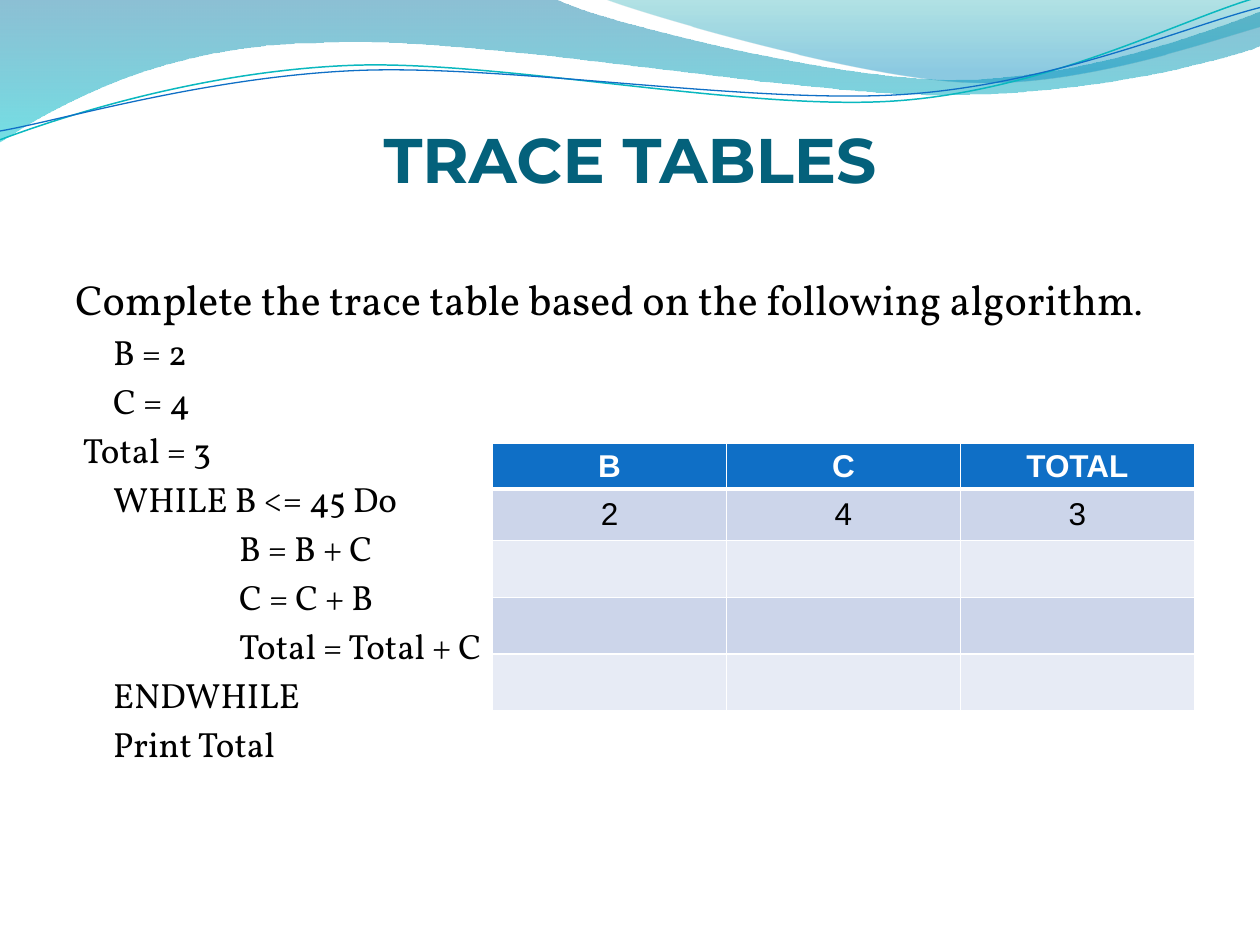
import pptx
import pptx.util
import pptx.dml.color
import pptx.enum.text
import pptx.oxml
import pptx.oxml.ns

COLORS = {
    "title": "04617B", "ink": "000000", "paper": "FFFFFF", "header": "0F6FC6",
    "band": "CCD5EA", "pale": "E7EBF5", "teal": "0AB8BF", "deep": "0074A1",
    "cyan": "00C6CF", "lagoon": "00A1A9", "sky": "008BBF",
}
GRID_COLUMNS, GRID_ROWS = 10, 7.5
ALIGN = pptx.enum.text.PP_ALIGN
ANCHOR = pptx.enum.text.MSO_ANCHOR

# Each outline is a start point, then cubic curves (three points) or lines (one point).
LEFT_WAVE = [
    (0, -0.01), [(4.4, -0.01)],
    [(4.76, 0.17), (6.64, 0.63), (7.58, 0.63)],
    [(8.53, 0.63), (9.58, 0.26), (10, 0.09)], [(10.01, 0.36)],
    [(9.83, 0.44), (8.7, 0.76), (7.46, 0.75)],
    [(6.22, 0.75), (3.82, 0.28), (2.57, 0.34)],
    [(1.29, 0.35), (0.46, 0.83), (-0.01, 1.13)], [(0, -0.01)],
]
RIGHT_WAVE = [
    (4.79, -0.01), [(5.09, 0.11), (6.82, 0.62), (7.69, 0.65)],
    [(8.56, 0.69), (9.61, 0.32), (10, 0.21)], [(10, 0)], [(4.79, -0.01)],
]
TEAL_LINE = [
    (0, 1.11), [(0.48, 0.93), (1.58, 0.57), (2.77, 0.52)],
    [(3.95, 0.47), (5.93, 0.89), (7.13, 0.8)],
    [(8.33, 0.71), (9.38, 0.15), (9.98, -0.02)],
]
BLUE_LINE = [
    (0, 1.04), [(0.47, 0.96), (1.64, 0.61), (2.83, 0.56)],
    [(4.03, 0.51), (5.97, 0.83), (7.17, 0.75)],
    [(8.36, 0.67), (9.41, 0.21), (10, 0.06)],
]
# Left margin in columns, then the line of the algorithm.
ALGORITHM = [
    (0.3, "B = 2"), (0.3, "C = 4"), (0.06, "Total = 3"), (0.3, "WHILE B <= 45 Do"),
    (1.3, "B = B + C"), (1.3, "C = C + B"), (1.3, "Total = Total + C"),
    (0.3, "ENDWHILE"), (0.3, "Print Total"),
]
TRACE = [["B", "C", "TOTAL"], ["2", "4", "3"]] + [[""] * 3] * 3
TRACE_HEIGHTS = [0.36, 0.41, 0.45, 0.45, 0.45]


def color(name):
    return pptx.dml.color.RGBColor.from_string(COLORS[name])


def bend(shape, segments):
    """Join each three line points of a freeform into one cubic curve."""
    lines = list(shape._element.iter(pptx.oxml.ns.qn("a:lnTo")))
    for segment in segments:
        group, lines = lines[:len(segment)], lines[len(segment):]
        if len(segment) == 3:
            curve = pptx.oxml.parse_xml(f'<a:cubicBezTo {pptx.oxml.ns.nsdecls("a")}/>')
            group[0].addprevious(curve)
            for line in group:
                curve.append(line[0])
                line.getparent().remove(line)


class SlideBuilder:
    """Holds the deck's grid and text style, and the slide being filled."""

    def __init__(self, deck):
        self.column = deck.slide_width / GRID_COLUMNS
        self.row = deck.slide_height / GRID_ROWS
        self.body_font, self.table_font = "Vollkorn", "Arial"
        self.slide = deck.slides.add_slide(deck.slide_layouts[5])

    def across(self, columns):
        return pptx.util.Emu(round(columns * self.column))

    def down(self, rows):
        return pptx.util.Emu(round(rows * self.row))

    def area(self, left, top, width, height):
        return self.across(left), self.down(top), self.across(width), self.down(height)

    def span(self, para, text, font, size, ink, bold=False):
        span = para.add_run()
        span.text = text
        span.font.name, span.font.size, span.font.bold = font, pptx.util.Pt(size), bold
        span.font.color.rgb = color(ink)

    def outline(self, outline, close):
        start, *segments = outline
        points = [(self.across(x), self.down(y)) for segment in segments for x, y in segment]
        builder = self.slide.shapes.build_freeform(self.across(start[0]), self.down(start[1]))
        builder.add_line_segments(points, close=close)
        shape = builder.convert_to_shape()
        shape.shadow.inherit = False
        bend(shape, segments)
        return shape

    def wave(self, outline, stops):
        """Fill an outline from top to bottom; a stop is position, colour, opacity."""
        shape = self.outline(outline, True)
        shape.line.fill.background()
        shape.fill.gradient()
        shape.fill.gradient_angle = 270
        for stop, (position, name, opacity) in zip(shape.fill.gradient_stops, stops):
            stop.position = position
            stop.color.rgb = color(name)
        tints = shape._element.spPr.iter(pptx.oxml.ns.qn("a:srgbClr"))
        for tint, (position, name, opacity) in zip(tints, stops):
            tint.append(pptx.oxml.parse_xml(
                f'<a:alpha {pptx.oxml.ns.nsdecls("a")} val="{round(opacity * 100000)}"/>'))

    def ribbon(self, outline, name, width):
        shape = self.outline(outline, False)
        shape.fill.background()
        shape.line.color.rgb = color(name)
        shape.line.width = pptx.util.Pt(width)

    def title(self, text, area):
        box = self.slide.shapes.title
        box.left, box.top, box.width, box.height = self.area(*area)
        frame = box.text_frame
        frame.margin_left = frame.margin_right = frame.margin_bottom = 0
        frame.vertical_anchor = ANCHOR.BOTTOM
        para = frame.paragraphs[0]
        para.alignment = ALIGN.CENTER
        self.span(para, text, "Montserrat", 36, "title", True)

    def body(self, lead, lines, area):
        frame = self.slide.shapes.add_textbox(*self.area(*area)).text_frame
        frame.word_wrap = True
        para = frame.paragraphs[0]
        self.span(para, lead, self.body_font, 24, "ink")
        self.span(para, ".", self.body_font, 20, "ink")
        for margin, text in lines:
            para = frame.add_paragraph()
            para.space_before = pptx.util.Pt(4)
            para._p.get_or_add_pPr().set("marL", str(self.across(margin)))
            self.span(para, text, self.body_font, 20, "ink")

    def border(self, cell, side, width):
        cell._tc.get_or_add_tcPr().append(pptx.oxml.parse_xml(
            f'<a:{side} {pptx.oxml.ns.nsdecls("a")} w="{pptx.util.Pt(width)}"><a:solidFill>'
            f'<a:srgbClr val="{COLORS["paper"]}"/></a:solidFill></a:{side}>'))

    def table(self, rows, heights, left, top, width):
        table = self.slide.shapes.add_table(
            len(rows), len(rows[0]), *self.area(left, top, width, sum(heights))).table
        for index, (texts, height) in enumerate(zip(rows, heights)):
            table.rows[index].height = self.down(height)
            header = index == 0
            fill = "header" if header else ("pale", "band")[index % 2]
            for position, text in enumerate(texts):
                cell = table.cell(index, position)
                for side in ("lnL", "lnR", "lnT", "lnB"):
                    thick = (header and side == "lnB") or (index == 1 and side == "lnT")
                    self.border(cell, side, 3 if thick else 1)
                cell.fill.solid()
                cell.fill.fore_color.rgb = color(fill)
                cell.vertical_anchor = ANCHOR.MIDDLE
                if header:
                    cell.margin_top = cell.margin_bottom = self.down(0.03)
                if text:
                    para = cell.text_frame.paragraphs[0]
                    para.alignment = ALIGN.CENTER
                    self.span(para, text, self.table_font, 18,
                              "paper" if header else "ink", header)


def main():
    deck = pptx.Presentation()
    deck.slide_width, deck.slide_height = pptx.util.Inches(10), pptx.util.Inches(7.5)
    page = SlideBuilder(deck)
    page.wave(LEFT_WAVE, [(0, "deep", 0.45), (1, "cyan", 0.55)])
    page.wave(RIGHT_WAVE, [(0, "lagoon", 0.3), (0.8, "sky", 0.45)])
    page.ribbon(TEAL_LINE, "teal", 0.85)
    page.ribbon(BLUE_LINE, "header", 0.75)
    page.title("TRACE TABLES", (0.5, 0.77, 9, 0.79))
    page.body("Complete the trace table based on the following algorithm", ALGORITHM,
              (0.5, 2.12, 9, 4.8))
    page.table(TRACE, TRACE_HEIGHTS, 3.91, 3.52, 5.57)
    deck.save("out.pptx")


if __name__ == "__main__":
    main()
